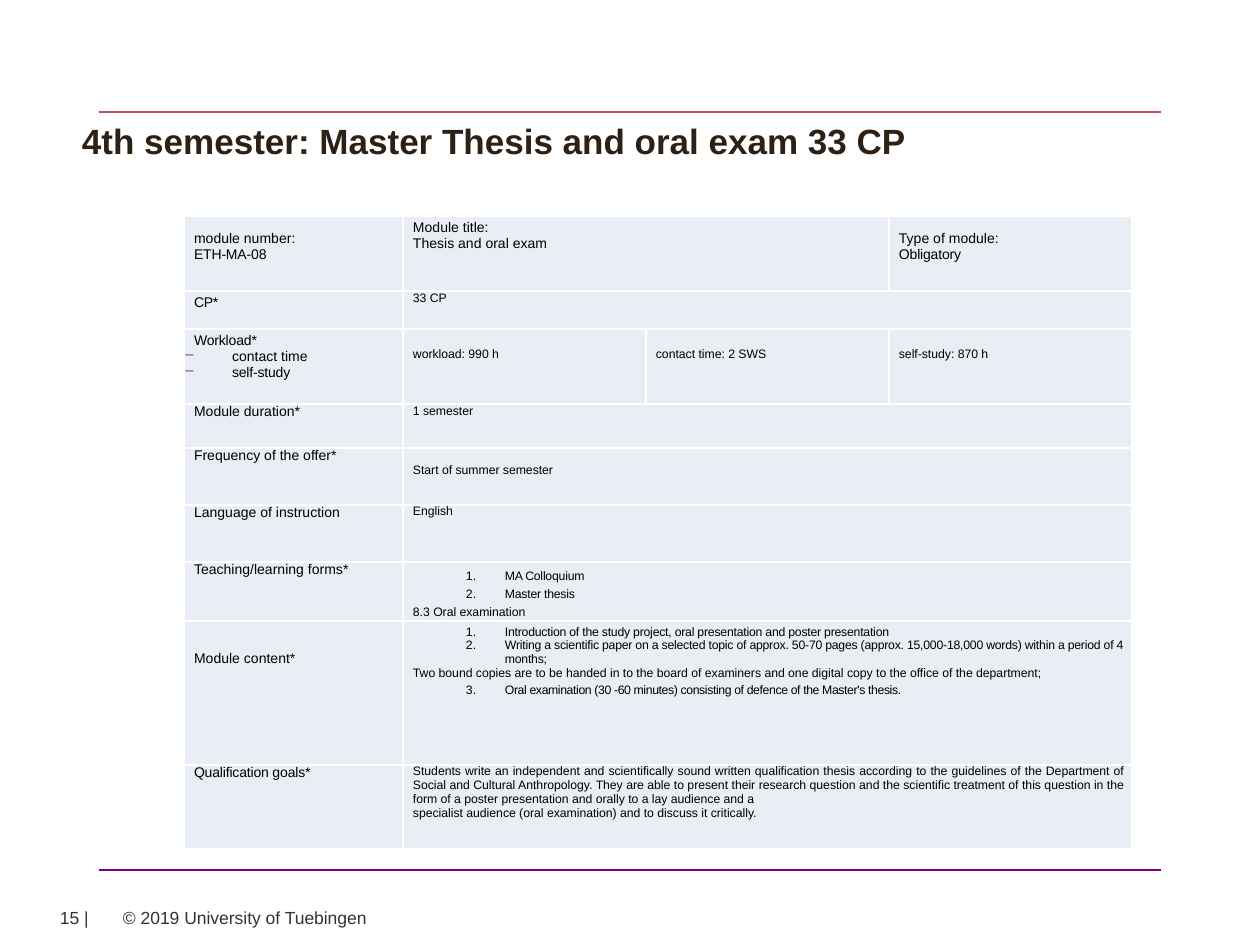
from lxml.etree import SubElement
from pptx import Presentation
from pptx.dml.color import RGBColor
from pptx.enum.shapes import MSO_CONNECTOR as Connector
from pptx.enum.text import MSO_ANCHOR as Anchor, PP_ALIGN as Align
from pptx.oxml.ns import qn
from pptx.util import Emu, Pt

PX = 914400 // 126
COLORS = {"title": "2D2015", "footer": "333333", "text": "000000", "cell": "E9EDF4",
          "border": "FFFFFF", "top rule": "C0504D", "bottom rule": "800080"}
FONT = "Arial"
TITLE = "4th semester: Master Thesis and oral exam 33 CP"
FOOTER = "15 |\t© 2019 University of Tuebingen"

# Paragraph formats
LABEL = dict(size=8, left=10)
TIGHT = dict(LABEL, spacing=-0.1)
EXACT = dict(LABEL, line=11.4)
BODY = dict(size=7, left=10)
DASH = dict(size=8, left=48, indent=-48, bullet="−")
ITEM = dict(size=7, left=102, indent=-39, level=1, spacing=-0.1)
JUSTIFIED = dict(BODY, align=Align.JUSTIFY)

# Rows: height, then cells of (top margin, columns spanned, paragraphs)
ROWS = [
    (75, [(15, 1, [("module number:", LABEL), ("ETH-MA-08", TIGHT)]),
          (0, 2, [("Module title:", EXACT), ("Thesis and oral exam", LABEL)]),
          (15, 1, [("Type of module:", LABEL), ("Obligatory", TIGHT)])]),
    (38, [(0, 1, [("CP*", dict(EXACT, spacing=-0.2))]),
          (0, 3, [("33 CP", BODY)])]),
    (75, [(0, 1, [("Workload*", dict(EXACT, spacing=-0.1)), ("contact time", DASH),
                  ("self-study", dict(DASH, spacing=-0.1))]),
          (18, 1, [("workload: 990 h", BODY)]),
          (18, 1, [("contact time: 2 SWS", BODY)]),
          (18, 1, [("self-study: 870 h", BODY)])]),
    (44, [(0, 1, [("Module duration*", LABEL)]),
          (0, 3, [("1 semester", BODY)])]),
    (57, [(0, 1, [("Frequency of the offer*", LABEL)]),
          (16, 3, [("Start of summer semester", BODY)])]),
    (57, [(0, 1, [("Language of instruction", LABEL)]),
          (0, 3, [("English", BODY)])]),
    (59, [(0, 1, [("Teaching/learning forms*", LABEL)]),
          (3, 3, [("MA Colloquium", dict(ITEM, number=1, line=10.3)),
                  ("Master thesis", dict(ITEM, number=1, line=10.3)),
                  ("8.3 Oral examination", dict(BODY, line=10.3))])]),
    (144, [(30, 1, [("Module content*", LABEL)]),
           (0, 3, [("Introduction of the study project, oral presentation and poster "
                    "presentation", dict(ITEM, number=1, line=10.3)),
                   ("Writing a scientific paper on a selected topic of approx. 50-70 pages "
                    "(approx. 15,000-18,000 words) within a period of 4 months;",
                    dict(ITEM, number=1)),
                   ("Two bound copies are to be handed in to the board of examiners and one "
                    "digital copy to the office of the department;", BODY),
                   ("Oral examination (30 -60 minutes) consisting of defence of the Master's "
                    "thesis.", dict(ITEM, number=3, line=9.8, spacing=-0.2))])]),
    (84, [(0, 1, [("Qualification goals*", TIGHT)]),
          (0, 3, [("Students write an independent and scientifically sound written "
                   "qualification thesis according to the guidelines of the Department of "
                   "Social and Cultural Anthropology. They are able to present their research "
                   "question and the scientific treatment of this question in the form of a "
                   "poster presentation and orally to a lay audience and a", JUSTIFIED),
                  ("specialist audience (oral examination) and to discuss it critically.",
                   dict(JUSTIFIED, line=8.2))])]),
]
COLUMNS = [219, 243, 243, 243]
TABLE_LEFT, TABLE_TOP = 184, 216


def px(value):
    return Emu(value * PX)


def rgb(name):
    return RGBColor.from_string(COLORS[name])


def write(paragraph, text, size=8, color="text", bold=False, left=0, indent=0, level=0,
          line=None, align=Align.LEFT, spacing=0, bullet=None, number=None, tab=None):
    paragraph.alignment = align
    paragraph.level = level
    paragraph.space_before = Pt(0)
    paragraph.line_spacing = Pt(line) if line else 1.0
    properties = paragraph._p.get_or_add_pPr()
    properties.set("marL", str(px(left)))
    properties.set("indent", str(px(indent)))
    if bullet:
        SubElement(properties, qn("a:buChar"), char=bullet)
    elif number:
        auto = SubElement(properties, qn("a:buAutoNum"), type="arabicPeriod")
        if number > 1:
            auto.set("startAt", str(number))
    else:
        SubElement(properties, qn("a:buNone"))
    if tab:
        tabs = SubElement(properties, qn("a:tabLst"))
        SubElement(tabs, qn("a:tab"), pos=str(px(tab)), algn="l")
    run = paragraph.add_run()
    run.text = text
    run.font.name = FONT
    run.font.size = Pt(size)
    run.font.bold = bold
    run.font.color.rgb = rgb(color)
    if spacing:
        run._r.get_or_add_rPr().set("spc", str(round(spacing * 100)))


def set_margins(target, left=0, top=0, right=0, bottom=0):
    target.margin_left, target.margin_top = px(left), px(top)
    target.margin_right, target.margin_bottom = px(right), px(bottom)


def add_text(slide, text, box, anchor=Anchor.TOP, **text_format):
    frame = slide.shapes.add_textbox(*map(px, box)).text_frame
    frame.word_wrap = True
    frame.vertical_anchor = anchor
    set_margins(frame)
    write(frame.paragraphs[0], text, **text_format)


def add_rule(slide, y, color):
    rule = slide.shapes.add_connector(Connector.STRAIGHT, px(99), px(y), px(1161), px(y))
    rule.line.color.rgb = rgb(color)
    rule.line.width = Pt(0.75)
    SubElement(rule._element.spPr, qn("a:effectLst"))


def style_cell(cell):
    set_margins(cell)
    properties = cell._tc.get_or_add_tcPr()
    for side in ("a:lnL", "a:lnR", "a:lnT", "a:lnB"):
        border = SubElement(properties, qn(side), w=str(Pt(1)))
        fill = SubElement(border, qn("a:solidFill"))
        SubElement(fill, qn("a:srgbClr"), val=COLORS["border"])
    cell.fill.solid()
    cell.fill.fore_color.rgb = rgb("cell")


def add_module_table(slide):
    height = sum(row_height for row_height, _ in ROWS)
    table = slide.shapes.add_table(len(ROWS), len(COLUMNS), px(TABLE_LEFT), px(TABLE_TOP),
                                   px(sum(COLUMNS)), px(height)).table
    table.first_row = table.horz_banding = False
    for column, width in zip(table.columns, COLUMNS):
        column.width = px(width)
    for cell in table.iter_cells():
        style_cell(cell)
    for row, (row_height, cells) in enumerate(ROWS):
        table.rows[row].height = px(row_height)
        column = 0
        for top, span, paragraphs in cells:
            cell = table.cell(row, column)
            if span > 1:
                cell.merge(table.cell(row, column + span - 1))
            set_margins(cell, top=top, right=8)
            frame = cell.text_frame
            for index, (text, text_format) in enumerate(paragraphs):
                paragraph = frame.add_paragraph() if index else frame.paragraphs[0]
                write(paragraph, text, **text_format)
            column += span


def main():
    presentation = Presentation()
    presentation.slide_width, presentation.slide_height = px(1260), px(945)
    slide = presentation.slides.add_slide(presentation.slide_layouts[6])

    # Rules, title and footer
    add_rule(slide, 112, "top rule")
    add_rule(slide, 870, "bottom rule")
    add_text(slide, TITLE, (82, 118, 1097, 43), anchor=Anchor.BOTTOM,
             size=20, bold=True, color="title")
    add_text(slide, FOOTER, (60, 907, 1062, 20), size=10, color="footer", tab=761)

    # Module description
    add_module_table(slide)
    presentation.save("out.pptx")


if __name__ == "__main__":
    main()
